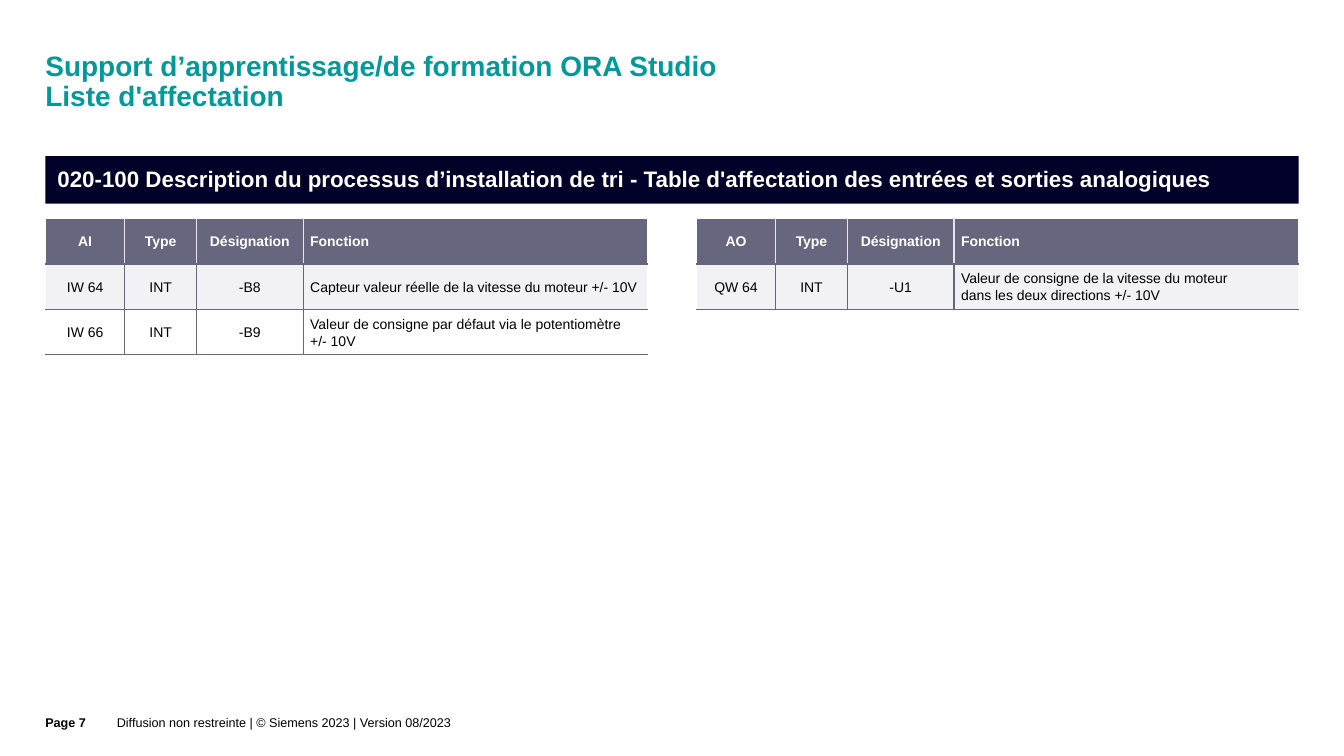
from lxml.etree import SubElement
from pptx import Presentation
from pptx.dml.color import RGBColor
from pptx.enum.shapes import MSO_SHAPE
from pptx.enum.text import MSO_ANCHOR, MSO_AUTO_SIZE, PP_ALIGN
from pptx.oxml.ns import qn
from pptx.util import Inches, Pt

TEAL = RGBColor(0x00, 0x99, 0x99)
NAVY = RGBColor(0x00, 0x00, 0x28)
SLATE = RGBColor(0x66, 0x66, 0x7E)
MIST = RGBColor(0xE5, 0xE5, 0xE9)
PALE = RGBColor(0xF2, 0xF2, 0xF4)
WHITE = RGBColor(0xFF, 0xFF, 0xFF)
BLACK = RGBColor(0x00, 0x00, 0x00)

LEFT, CONTENT_WIDTH = 0.45, 12.44
TABLE_TOP, TABLE_WIDTH, ROW_HEIGHT = 2.17, 5.98, 0.45
LEADING_COLUMNS = [0.79, 0.71, 1.06]

INPUTS = [
    ["AI", "Type", "Désignation", "Fonction"],
    ["IW 64", "INT", "-B8", "Capteur valeur réelle de la vitesse du moteur +/- 10V"],
    ["IW 66", "INT", "-B9", "Valeur de consigne par défaut via le potentiomètre +/- 10V"],
]
OUTPUTS = [
    ["AO", "Type", "Désignation", "Fonction"],
    ["QW 64", "INT", "-U1",
     "Valeur de consigne de la vitesse du moteur\vdans les deux directions +/- 10V"],
]


def write_text(frame, text, size, color, bold=False, align=PP_ALIGN.LEFT, spacing=1.0):
    frame.word_wrap = True
    paragraph = frame.paragraphs[0]
    paragraph.text = text
    paragraph.alignment = align
    paragraph.line_spacing = spacing
    font = {"name": "Arial", "size": Pt(size), "bold": bold}
    for name, value in font.items():
        setattr(paragraph.font, name, value)
    paragraph.font.color.rgb = color


def set_frame(frame, anchor, left=0, top=0, right=0, bottom=0):
    frame.auto_size = MSO_AUTO_SIZE.NONE
    frame.vertical_anchor = anchor
    margins = {"left": left, "top": top, "right": right, "bottom": bottom}
    for side, value in margins.items():
        setattr(frame, f"margin_{side}", Inches(value))


def add_title(slide, left, top, width, height):
    title = slide.shapes.title
    box = {"left": left, "top": top, "width": width, "height": height}
    for name, value in box.items():
        setattr(title, name, Inches(value))
    set_frame(title.text_frame, MSO_ANCHOR.TOP, right=0.35, bottom=0.02)
    write_text(title.text_frame,
               "Support d’apprentissage/de formation ORA Studio\vListe d'affectation",
               20, TEAL, bold=True, spacing=0.9)


def add_banner(slide, left, top, width, height):
    banner = slide.shapes.add_shape(MSO_SHAPE.RECTANGLE, Inches(left), Inches(top),
                                    Inches(width), Inches(height))
    banner.shadow.inherit = False
    banner.fill.solid()
    banner.fill.fore_color.rgb = NAVY
    banner.line.fill.background()
    set_frame(banner.text_frame, MSO_ANCHOR.MIDDLE, left=0.12, right=0.08)
    write_text(banner.text_frame,
               "020-100 Description du processus d’installation de tri - "
               "Table d'affectation des entrées et sorties analogiques",
               16, WHITE, bold=True, spacing=0.9)


def set_borders(cell, borders):
    """Draw borders given as (side letter, colour, points), in the order L, R, T, B."""
    properties = cell._tc.get_or_add_tcPr()
    for side, color, points in borders:
        line = SubElement(properties, qn(f"a:ln{side}"), w=str(Pt(points)))
        fill = SubElement(line, qn("a:solidFill"))
        SubElement(fill, qn("a:srgbClr"), val=str(color))


def format_cell(cell, text, row, column, last_column):
    header = row == 0
    inner = MIST if header else SLATE
    borders = [("L", inner if column else WHITE, 1)]
    if column < last_column:
        borders.append(("R", inner, 1))
    borders.append(("T", WHITE if header else SLATE, 2.25 if row == 1 else 1))
    borders.append(("B", SLATE, 2.25 if header else 1))
    set_borders(cell, borders)

    cell.fill.solid()
    cell.fill.fore_color.rgb = SLATE if header else PALE if row % 2 else WHITE
    cell.vertical_anchor = MSO_ANCHOR.MIDDLE
    cell.margin_left = cell.margin_right = Inches(0.07)
    cell.margin_top = cell.margin_bottom = 0
    write_text(cell.text_frame, text, 10, WHITE if header else BLACK, bold=header,
               align=PP_ALIGN.LEFT if column == last_column else PP_ALIGN.CENTER,
               spacing=1.1)


def add_assignment_table(slide, left, top, width, rows):
    columns = LEADING_COLUMNS + [width - sum(LEADING_COLUMNS)]
    table = slide.shapes.add_table(len(rows), len(columns), Inches(left), Inches(top),
                                   Inches(width), Inches(ROW_HEIGHT * len(rows))).table
    table.horz_banding = False
    for column, column_width in zip(table.columns, columns):
        column.width = Inches(column_width)
    for row, texts in enumerate(rows):
        table.rows[row].height = Inches(ROW_HEIGHT)
        for column, text in enumerate(texts):
            format_cell(table.cell(row, column), text, row, column, len(columns) - 1)


def add_footer(slide, left, top, width, height):
    page_width = 0.71
    parts = [
        (left, page_width, "Page 7", True),
        (left + page_width, width - page_width,
         "Diffusion non restreinte | © Siemens 2023 | Version 08/2023", False),
    ]
    for part_left, part_width, text, bold in parts:
        box = slide.shapes.add_textbox(Inches(part_left), Inches(top),
                                       Inches(part_width), Inches(height))
        set_frame(box.text_frame, MSO_ANCHOR.MIDDLE, bottom=0.07)
        write_text(box.text_frame, text, 9, BLACK, bold=bold)


def main():
    presentation = Presentation()
    presentation.slide_width = Inches(13.34)
    presentation.slide_height = Inches(7.5)
    slide = presentation.slides.add_slide(presentation.slide_layouts[5])
    add_title(slide, LEFT, 0.52, 10.79, 0.63)
    add_banner(slide, LEFT, 1.55, CONTENT_WIDTH, 0.47)
    add_assignment_table(slide, LEFT, TABLE_TOP, TABLE_WIDTH, INPUTS)
    outputs_left = LEFT + CONTENT_WIDTH - TABLE_WIDTH
    add_assignment_table(slide, outputs_left, TABLE_TOP, TABLE_WIDTH, OUTPUTS)
    add_footer(slide, LEFT, 6.9, 10.79, 0.6)
    presentation.save("out.pptx")


if __name__ == "__main__":
    main()
